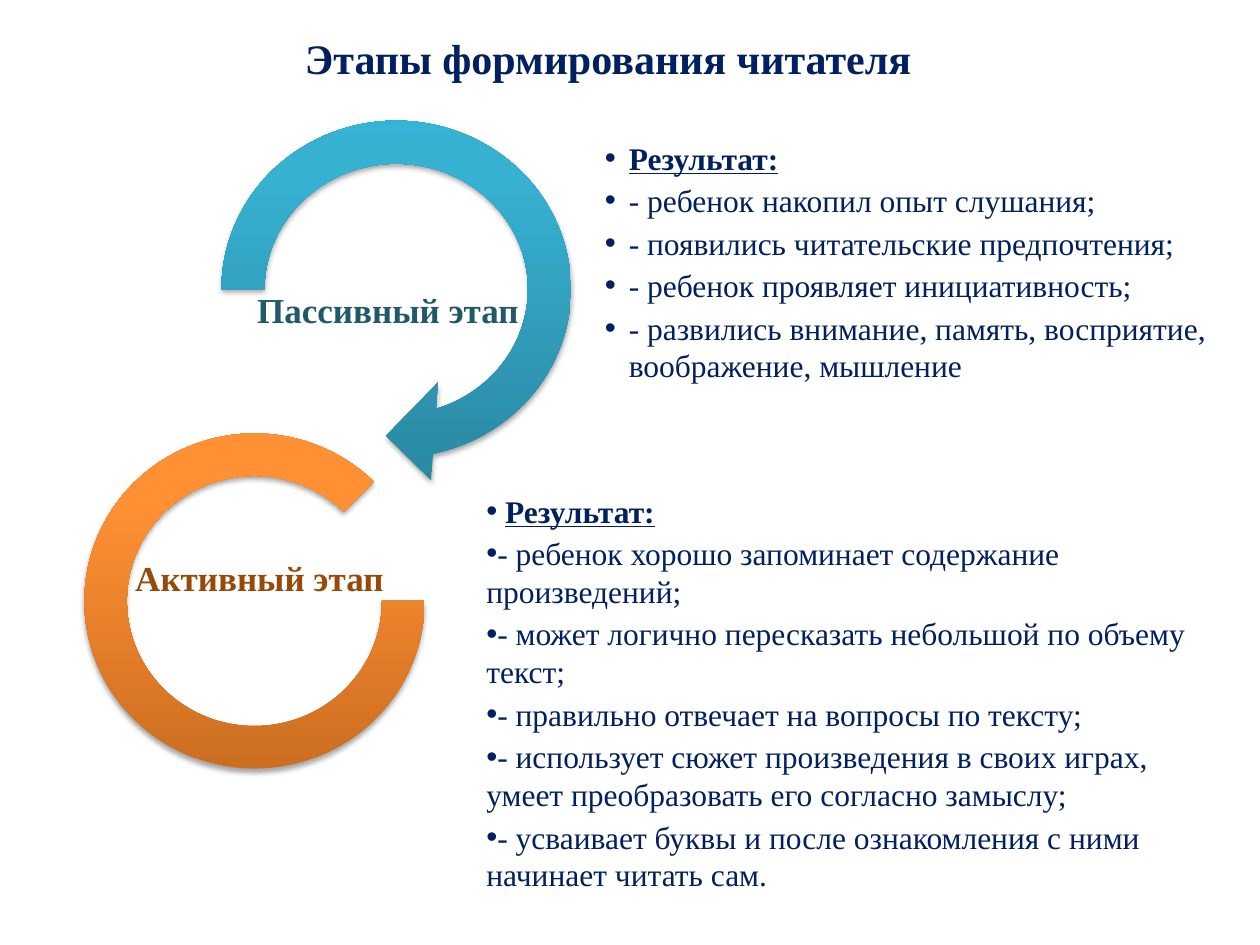
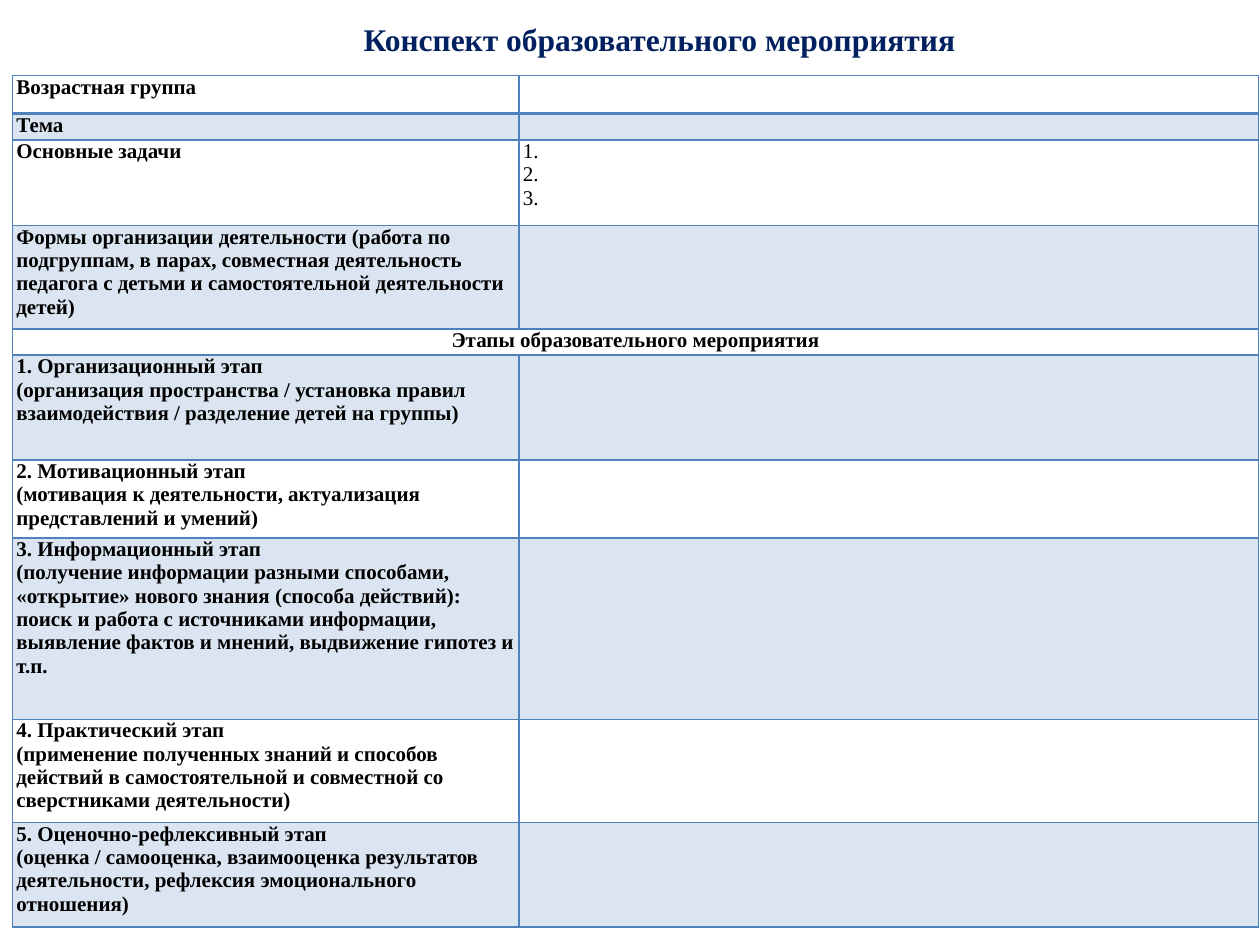
"""Builds two slides: the stages of forming a reader and a lesson plan table."""
from copy import deepcopy

from lxml import etree
from pptx import Presentation
from pptx.dml.color import RGBColor
from pptx.enum.shapes import MSO_SHAPE
from pptx.enum.text import MSO_ANCHOR, MSO_AUTO_SIZE, PP_ALIGN
from pptx.oxml.ns import qn
from pptx.util import Inches, Pt

LEFT, CENTER = PP_ALIGN.LEFT, PP_ALIGN.CENTER
TOP, MIDDLE = MSO_ANCHOR.TOP, MSO_ANCHOR.MIDDLE
NO_FIT = MSO_AUTO_SIZE.NONE
ARROW, ARC = MSO_SHAPE.CIRCULAR_ARROW, MSO_SHAPE.BLOCK_ARC

FONT = "Times New Roman"
NAVY = RGBColor(0x00, 0x20, 0x60)
TEAL = RGBColor(0x21, 0x59, 0x68)
BROWN = RGBColor(0x98, 0x48, 0x07)
BLACK = RGBColor(0x00, 0x00, 0x00)
WHITE = RGBColor(0xFF, 0xFF, 0xFF)
ACCENT = RGBColor(0x4F, 0x81, 0xBD)
BLUES = [RGBColor(0x2A, 0x88, 0xA2), RGBColor(0x37, 0xB1, 0xD2), RGBColor(0x34, 0xB4, 0xD6)]
ORANGES = [RGBColor(0xCC, 0x6E, 0x20), RGBColor(0xFF, 0x90, 0x34), RGBColor(0xFF, 0x91, 0x36)]


def write(tf, lines, size=18, color=NAVY, bold=True, align=LEFT, spacing=1, after=0,
          anchor=MIDDLE, inset=(0.01, 0.01), bullet_indent=None):
    """Fill a text frame; with bullets, the first line is an underlined heading."""
    tf.word_wrap = True
    tf.auto_size = NO_FIT
    tf.vertical_anchor = anchor
    tf.margin_left = tf.margin_right = Inches(inset[0])
    tf.margin_top = tf.margin_bottom = Inches(inset[1])
    for i, line in enumerate(lines):
        p = tf.paragraphs[0] if i == 0 else tf.add_paragraph()
        p.alignment = align
        p.line_spacing = spacing
        p.space_before, p.space_after = Pt(0), Pt(after)
        heading = bullet_indent is not None and i == 0
        if bullet_indent is not None:
            pPr = p._p.get_or_add_pPr()
            pPr.set("marL", str(Inches(0.19)))
            pPr.set("indent", str(Inches(bullet_indent)))
            etree.SubElement(pPr, qn("a:buChar"), char="•")
        parts = [" ", line.lstrip()] if line.startswith(" ") else [line]
        for part in parts:
            r = p.add_run()
            r.text = part
            r.font.name, r.font.size, r.font.color.rgb = FONT, Pt(size), color
            r.font.bold = bold or heading
            r.font.underline = heading and part != " "


def place(shape, x, y, w, h):
    """Move and size a placeholder."""
    shape.left, shape.top, shape.width, shape.height = map(Inches, (x, y, w, h))
    return shape.text_frame


prs = Presentation()
prs.slide_width, prs.slide_height = Inches(10), Inches(7.5)

s = prs.slides.add_slide(prs.slide_layouts[3])
write(place(s.shapes.title, 2.32, 0.21, 5.18, 0.53), ["Этапы формирования читателя"],
      size=24, spacing=1, after=8, anchor=TOP, inset=(0.1, 0.05))

stages = [
    (ARROW, (1.54, 0.74, 3.21, 3.11), (0.11, 11.42, 45, 108, 0.125), BLUES,
     "Пассивный этап", (1.85, 1.86), TEAL,
     (4.79, 0.8, 4.85, 2.55), -0.19,
     ["Результат:",
      "- ребенок накопил опыт слушания;",
      "- появились читательские предпочтения;",
      "- ребенок проявляет инициативность;",
      "- развились внимание, память, восприятие, воображение, мышление"]),
    (ARC, (0.67, 3.44, 2.7, 2.66), (0, 189, 0.127), ORANGES,
     "Активный этап", (0.83, 3.99), BROWN,
     (3.66, 3.83, 5.86, 3.33), 0,
     [" Результат:",
      "- ребенок хорошо запоминает содержание произведений;",
      "- может логично пересказать небольшой по объему текст;",
      "- правильно отвечает на вопросы по тексту;",
      "- использует сюжет произведения в своих играх, умеет преобразовать его согласно замыслу;",
      "- усваивает буквы и после ознакомления с ними начинает читать сам."]),
]
for idx, (kind, box, adjs, colors, label, (x, y), color, area, indent, lines) in enumerate(stages, 1):
    sp = s.shapes.add_shape(kind, *map(Inches, box))
    for i, value in enumerate(adjs):
        sp.adjustments[i] = value
    sp.line.fill.background()
    sp.fill.gradient()
    sp.fill.gradient_angle = 90
    gs_list = sp._element.spPr.find(qn("a:gradFill")).find(qn("a:gsLst"))
    gs_list.append(deepcopy(gs_list[-1]))
    for stop, position, rgb in zip(sp.fill.gradient_stops, (0, 0.8, 1), colors):
        stop.position, stop.color.rgb = position, rgb
    sp.shadow.inherit = False
    shadow = etree.SubElement(sp._element.spPr.find(qn("a:effectLst")), qn("a:outerShdw"),
                              blurRad=str(Pt(3.1)), dist=str(Pt(1.8)), dir="5400000", rotWithShape="0")
    black = etree.SubElement(shadow, qn("a:srgbClr"), val="000000")
    etree.SubElement(black, qn("a:alpha"), val="35000")

    tb = s.shapes.add_textbox(Inches(x), Inches(y), Inches(2.46), Inches(1.23))
    write(tb.text_frame, [label], size=20, color=color, align=CENTER, spacing=0.9)
    body = s.placeholders[idx]
    write(place(body, *area), lines, bold=False, after=2.7, bullet_indent=indent)
    body.fill.solid()
    body.fill.fore_color.rgb = WHITE

s = prs.slides.add_slide(prs.slide_layouts[5])
write(place(s.shapes.title, 2.48, 0.11, 5.51, 0.4), ["Конспект образовательного мероприятия"],
      align=CENTER, inset=(0.1, 0.05))

rows = [
    (0.3, ["Возрастная группа"], []),
    (0.21, ["Тема"], []),
    (0.68, ["Основные задачи"], ["1.", "2.", "3."]),
    (0.82, ["Формы организации деятельности (работа по подгруппам, в парах, совместная "
            "деятельность педагога с детьми и самостоятельной деятельности детей)"], []),
    (0.21, ["Этапы образовательного мероприятия"], []),
    (0.83, ["1. Организационный этап",
            "(организация пространства / установка правил взаимодействия / "
            "разделение детей на группы)"], []),
    (0.62, ["2. Мотивационный этап",
            "(мотивация к деятельности, актуализация представлений и умений)"], []),
    (1.44, ["3. Информационный этап",
            "(получение информации разными способами, «открытие» нового знания (способа "
            "действий): поиск и работа с источниками информации, выявление фактов и мнений, "
            "выдвижение гипотез и т.п."], []),
    (0.82, ["4. Практический этап",
            "(применение полученных знаний и способов действий в самостоятельной и "
            "совместной со сверстниками деятельности)"], []),
    (0.83, ["5. Оценочно-рефлексивный этап",
            "(оценка / самооценка, взаимооценка результатов деятельности, рефлексия "
            "эмоционального отношения)"], []),
]
STAGES_ROW = 4
tbl = s.shapes.add_table(len(rows), 2, Inches(0.1), Inches(0.6), Inches(9.9), Inches(6.77)).table
tbl.first_row = tbl.horz_banding = False
tbl.columns[0].width, tbl.columns[1].width = Inches(4.02), Inches(5.87)
for i, (height, *texts) in enumerate(rows):
    tbl.rows[i].height = Inches(height)
    for j, lines in enumerate(texts):
        cell = tbl.cell(i, j)
        tcPr = cell._tc.get_or_add_tcPr()
        for side in "LRTB":
            thick = (i, side) in ((0, "B"), (1, "T"))
            ln = etree.SubElement(tcPr, qn("a:ln" + side), w=str(Pt(2 if thick else 1)))
            etree.SubElement(etree.SubElement(ln, qn("a:solidFill")), qn("a:srgbClr"), val=str(ACCENT))
        if i % 2:
            cell.fill.solid()
            cell.fill.fore_color.rgb = ACCENT
            tint = tcPr.find(qn("a:solidFill")).find(qn("a:srgbClr"))
            etree.SubElement(tint, qn("a:alpha"), val="20000")
        else:
            cell.fill.background()
        if lines:
            write(cell.text_frame, lines, size=12, color=BLACK, bold=j == 0,
                  align=CENTER if i == STAGES_ROW else LEFT)
        else:
            cell.text_frame.paragraphs[0]._p.get_or_add_endParaRPr().set("sz", "1200")
        cell.vertical_anchor = TOP
        cell.margin_left = cell.margin_right = Inches(0.03)
        cell.margin_top = cell.margin_bottom = 0
tbl.cell(STAGES_ROW, 0).merge(tbl.cell(STAGES_ROW, 1))

prs.save("out.pptx")
